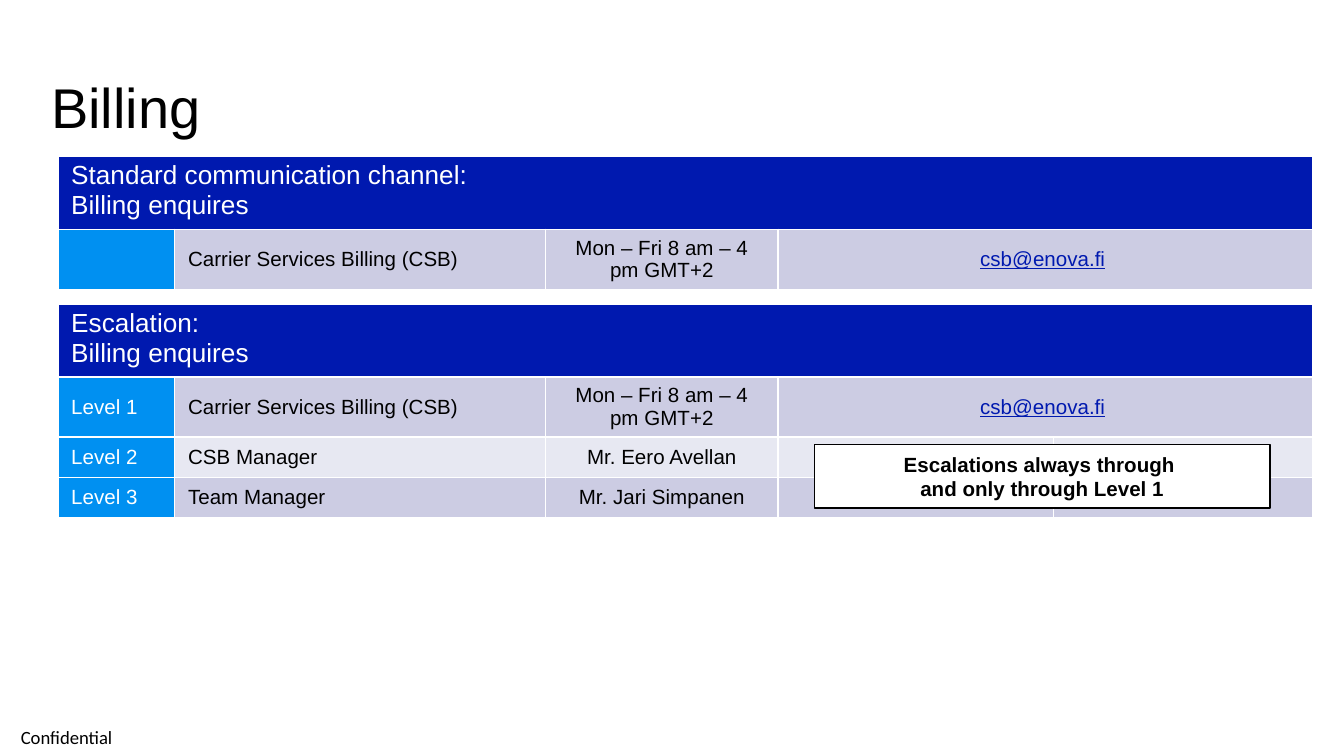
from lxml import etree
from pptx import Presentation
from pptx import util as u
from pptx.dml.color import RGBColor
from pptx.enum import shapes, text
from pptx.oxml.ns import qn

COLORS = {"navy": "0019AF", "blue": "0090F1", "dark_band": "CCCCE3",
          "light_band": "E7E8F2", "white": "FFFFFF", "black": "000000"}
SLIDE_WIDTH = u.Inches(10)
SLIDE_HEIGHT = SLIDE_WIDTH * 9 // 16
TABLE_LEFT, TABLE_WIDTH = 0.43, 9.34
LEVEL, ROLE, CONTACT = 0.87, 2.76, 1.73
HEADER_ROW, BODY_ROW = 0.53, 0.3
LEFT, CENTER = text.PP_ALIGN.LEFT, text.PP_ALIGN.CENTER
HOURS = "Mon – Fri 8 am – 4 pm GMT+2"
TEAM = "Carrier Services Billing (CSB)"
EMAIL = "csb@enova.fi"


def color(name):
    return RGBColor.from_string(COLORS[name])


def inches(box):
    return [u.Inches(length) for length in box]


def add_run(paragraph, words, size, ink="black", font="Arial",
            bold=False, underline=False):
    run = paragraph.add_run()
    run.text = words
    run.font.name, run.font.size = font, u.Pt(size)
    run.font.bold, run.font.underline = bold, underline
    run.font.color.rgb = color(ink)


def write(frame, lines, size, align=LEFT, **style):
    """Write one paragraph for each line."""
    frame.word_wrap = True
    for index, line in enumerate(lines):
        paragraph = frame.add_paragraph() if index else frame.paragraphs[0]
        paragraph.alignment = align
        add_run(paragraph, line, size, **style)


def add_label(slide, box, line, size, margin=0, **style):
    frame = slide.shapes.add_textbox(*inches(box)).text_frame
    frame.margin_left = frame.margin_right = u.Inches(margin)
    frame.margin_top = frame.margin_bottom = u.Inches(margin)
    frame.vertical_anchor = text.MSO_ANCHOR.MIDDLE
    write(frame, [line], size, **style)


def format_cell(cell, fill):
    """Give the cell its white borders, margins and fill."""
    properties = cell._tc.get_or_add_tcPr()
    for side in "LRTB":
        line = etree.SubElement(properties, qn(f"a:ln{side}"), w=str(u.Pt(1)))
        solid = etree.SubElement(line, qn("a:solidFill"))
        etree.SubElement(solid, qn("a:srgbClr"), val=COLORS["white"])
    cell.fill.solid()
    cell.fill.fore_color.rgb = color(fill)
    cell.margin_left = cell.margin_right = u.Inches(0.1)
    cell.margin_top = cell.margin_bottom = u.Inches(0.04)


def fill_body_cell(cell, value, column_index):
    cell.vertical_anchor = text.MSO_ANCHOR.MIDDLE
    paragraph = cell.text_frame.paragraphs[0]
    if not value:
        etree.SubElement(paragraph._p, qn("a:endParaRPr"), sz="1100")
        return
    is_email = column_index == 3
    ink = "navy" if is_email else "black" if column_index else "white"
    write(cell.text_frame, [value], 11, ink=ink, underline=is_email,
          align=CENTER if column_index > 1 else LEFT)
    if is_email:
        add_run(paragraph, " ", 11)


def add_contact_table(slide, top, height, columns, heading, rows):
    """Rows hold level, role, contact and, where known, e-mail address."""
    box = (TABLE_LEFT, top, TABLE_WIDTH, height)
    frame = slide.shapes.add_table(len(rows) + 1, len(columns), *inches(box))
    table = frame.table
    for column, width in zip(table.columns, columns):
        column.width = u.Inches(width)
    for row_index, row in enumerate(table.rows):
        row.height = u.Inches(BODY_ROW if row_index else HEADER_ROW)
    frame.height = u.Inches(height)

    for cell in table.rows[0].cells:
        format_cell(cell, "navy")
    header = table.cell(0, 0)
    header.merge(table.cell(0, len(columns) - 1))
    write(header.text_frame, heading, 14, ink="white")

    for row_index, values in enumerate(rows, 1):
        band = "dark_band" if row_index % 2 else "light_band"
        for column_index in range(len(columns)):
            cell = table.cell(row_index, column_index)
            format_cell(cell, band if column_index else "blue")
            value = values[column_index] if column_index < len(values) else ""
            fill_body_cell(cell, value, column_index)
        if len(values) == 4 and len(columns) > 4:
            table.cell(row_index, 3).merge(table.cell(row_index, len(columns) - 1))


def add_notice(slide, box, lines):
    shape = slide.shapes.add_shape(shapes.MSO_SHAPE.RECTANGLE, *inches(box))
    shape.shadow.inherit = False
    shape.fill.solid()
    shape.fill.fore_color.rgb = color("white")
    shape.line.color.rgb = color("black")
    shape.line.width = u.Pt(0.75)
    shape.text_frame.vertical_anchor = text.MSO_ANCHOR.MIDDLE
    write(shape.text_frame, lines, 11, align=CENTER, bold=True)


def main():
    presentation = Presentation()
    presentation.slide_width, presentation.slide_height = SLIDE_WIDTH, SLIDE_HEIGHT
    slide = presentation.slides.add_slide(presentation.slide_layouts[6])

    add_label(slide, (0, 5.34, 0.99, 0.29), "Confidential", 10,
              font="Calibri", align=CENTER)
    add_label(slide, (0.35, 0.27, 9.31, 1.04), "Billing", 30, margin=0.03)
    add_contact_table(
        slide, 2.26, 1.59, [LEVEL, ROLE, CONTACT, 2.05, 1.93],
        ["Escalation:", "Billing enquires"],
        [("Level 1", TEAM, HOURS, EMAIL),
         ("Level 2", "CSB Manager", "Mr. Eero Avellan"),
         ("Level 3", "Team Manager", "Mr. Jari Simpanen")])
    add_notice(slide, (6.06, 3.31, 3.39, 0.47),
               ["Escalations always through ", "and only through Level 1"])
    add_contact_table(
        slide, 1.16, 0.98, [LEVEL, ROLE, CONTACT, 3.98],
        ["Standard communication channel:", "Billing enquires"],
        [("", TEAM, HOURS, EMAIL)])
    presentation.save("out.pptx")


if __name__ == "__main__":
    main()
